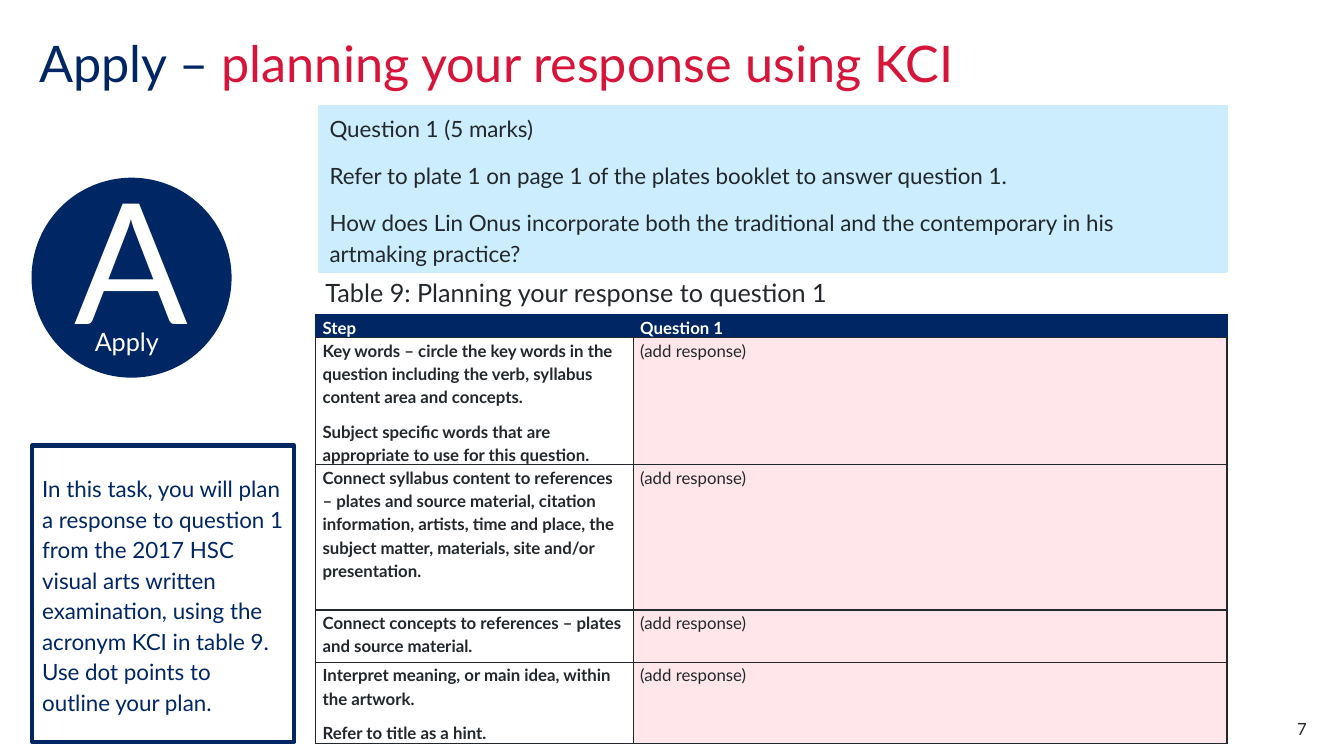
import pptx
import pptx.dml.color
import pptx.enum.shapes
import pptx.enum.text
import pptx.oxml
import pptx.oxml.ns
import pptx.util
from pptx.util import Inches

COLORS = {"navy": "002664", "red": "D7153A", "text": "22272B",
          "white": "FFFFFF", "sky": "CBEDFD", "pink": "FFE6EA"}
SHAPES = pptx.enum.shapes.MSO_SHAPE
ANCHOR = pptx.enum.text.MSO_ANCHOR
ALIGN = pptx.enum.text.PP_ALIGN


def rgb(name):
    return pptx.dml.color.RGBColor.from_string(COLORS[name])


def write(frame, lines, size, color, bold=False, align=ALIGN.LEFT, spacing=None, gap=0, margins=None):
    """Fill a text frame or cell; gap is the points between paragraphs, margins are (sides, top and bottom)."""
    frame.word_wrap = True
    if margins:
        frame.margin_left = frame.margin_right = Inches(margins[0])
        frame.margin_top = frame.margin_bottom = Inches(margins[1])
    text_frame = getattr(frame, "text_frame", frame)
    for index, line in enumerate(lines):
        paragraph = text_frame.add_paragraph() if index else text_frame.paragraphs[0]
        paragraph.text = line
        paragraph.alignment = align
        paragraph.line_spacing = spacing
        paragraph.space_before = pptx.util.Pt(gap if index else 0)
        paragraph.font.name = "Lato"
        paragraph.font.size = pptx.util.Pt(size)
        paragraph.font.bold = bold
        paragraph.font.color.rgb = rgb(color)


presentation = pptx.Presentation()
presentation.slide_width, presentation.slide_height = Inches(13.33), Inches(7.5)
slide = presentation.slides.add_slide(presentation.slide_layouts[5])

# Title
title = slide.shapes.title
title.left, title.top, title.width, title.height = Inches(0.39), Inches(0.39), Inches(11.02), Inches(1.1)
title.text_frame.auto_size = pptx.enum.text.MSO_AUTO_SIZE.NONE
title.text_frame.vertical_anchor = ANCHOR.TOP
write(title.text_frame, ["Apply – "], 36, "navy", spacing=0.9, margins=(0, 0))
topic = title.text_frame.paragraphs[0].add_run()
topic.text = "planning your response using KCI"
topic.font.color.rgb = rgb("red")

# Badge, task and question panels
panels = [
    (SHAPES.OVAL, (0.32, 1.77, 1.97, 1.97), "navy", "navy", 1, ["A"],
     dict(size=120, color="white", align=ALIGN.CENTER)),
    (SHAPES.RECTANGLE, (0.32, 4.42, 2.6, 2.94), "white", "navy", 3,
     ["In this task, you will plan a response to question 1 from the 2017 HSC visual arts written "
      "examination, using the acronym KCI in table 9. Use dot points to outline your plan."],
     dict(size=16, color="navy", spacing=1.14)),
    (SHAPES.RECTANGLE, (3.17, 1.06, 8.99, 1.63), "sky", "sky", 3,
     ["Question 1 (5 marks)",
      "Refer to plate 1 on page 1 of the plates booklet to answer question 1.",
      "How does Lin Onus incorporate both the traditional and the contemporary in his artmaking practice?"],
     dict(size=16, color="text", spacing=1.14, gap=12)),
]
for kind, box, fill, line, line_width, lines, style in panels:
    panel = slide.shapes.add_shape(kind, *map(Inches, box))
    panel.shadow.inherit = False
    panel.fill.solid()
    panel.fill.fore_color.rgb = rgb(fill)
    panel.line.color.rgb = rgb(line)
    panel.line.width = pptx.util.Pt(line_width)
    panel.text_frame.vertical_anchor = ANCHOR.MIDDLE
    write(panel.text_frame, lines, **style)
    if kind == SHAPES.OVAL:
        panel.text_frame.margin_bottom = Inches(0.45)  # lifts the letter above its label

# Badge label, table caption and page number
labels = [
    ((0.94, 3.24, 0.73, 0.48), "Apply", dict(size=18, color="white", margins=(0, 0))),
    ((3.13, 2.84, 8.14, 0.29), "Table 9: Planning your response to question 1",
     dict(size=18, color="text", spacing=pptx.util.Pt(12))),
    ((12.17, 7.13, 0.79, 0.2), "7", dict(size=12, color="text", align=ALIGN.RIGHT, margins=(0, 0))),
]
for box, text, style in labels:
    label = slide.shapes.add_textbox(*map(Inches, box))
    write(label.text_frame, [text], **style)

# Planning table
steps = [
    (0.23, ["Step"]),
    (1.26, ["Key words – circle the key words in the question including the verb, syllabus content "
            "area and concepts.",
            "Subject specific words that are appropriate to use for this question."]),
    (1.44, ["Connect syllabus content to references – plates and source material, citation information, "
            "artists, time and place, the subject matter, materials, site and/or presentation."]),
    (0.52, ["Connect concepts to references – plates and source material."]),
    (0.8, ["Interpret meaning, or main idea, within the artwork.", "Refer to title as a hint."]),
]
column_widths = [3.15, 5.89]
table = slide.shapes.add_table(
    len(steps), 2, Inches(3.13), Inches(3.12), Inches(sum(column_widths)),
    Inches(sum(height for height, _ in steps))).table
for column, width in zip(table.columns, column_widths):
    column.width = Inches(width)

for row, (height, step) in enumerate(steps):
    table.rows[row].height = Inches(height)
    header = row == 0
    answer = ["Question 1"] if header else ["(add response)"]
    for column, lines in enumerate([step, answer]):
        cell = table.cell(row, column)
        write(cell, lines, 12, "white" if header else "text", bold=header or column == 0,
              spacing=1.15, gap=8, margins=(0.07, 0))
        cell.fill.solid()
        cell.fill.fore_color.rgb = rgb("navy" if header else ("white", "pink")[column])
        properties = cell._tc.get_or_add_tcPr()
        for position, side in enumerate("LRTB"):
            navy_edge = header and side != "B"
            border = pptx.oxml.parse_xml(
                f'<a:ln{side} {pptx.oxml.ns.nsdecls("a")} w="{6350 if navy_edge else 12700}"><a:solidFill>'
                f'<a:srgbClr val="{COLORS["navy" if navy_edge else "text"]}"/></a:solidFill></a:ln{side}>')
            properties.insert(position, border)

presentation.save("out.pptx")
